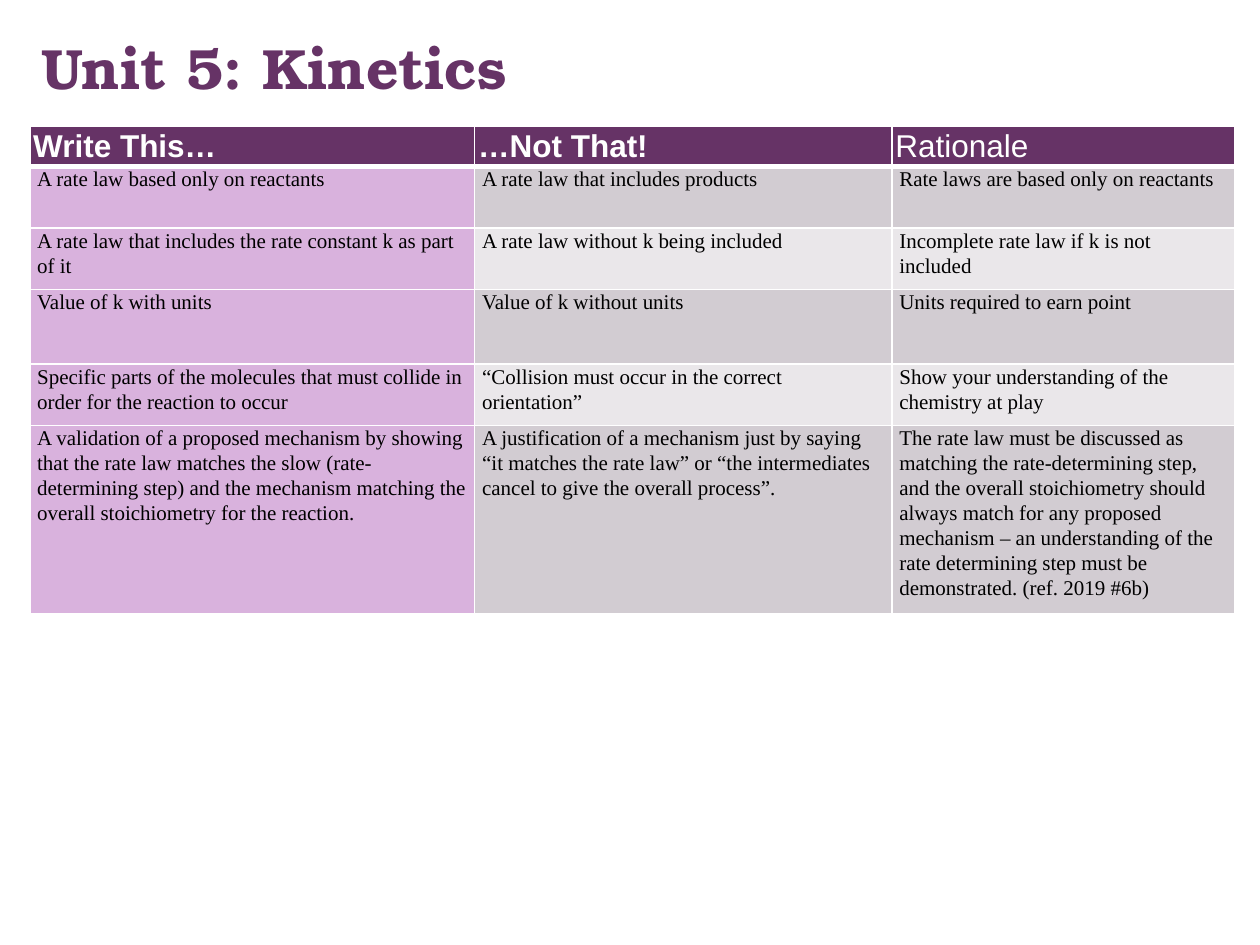
from pptx import Presentation
from pptx.dml.color import RGBColor
from pptx.enum.text import MSO_ANCHOR as Anchor
from pptx.oxml import parse_xml
from pptx.oxml.ns import nsdecls
from pptx.util import Cm, Pt

PURPLE, LILAC, WHITE, BLACK = "663366", "D9B2DD", "FFFFFF", "000000"
BANDS = ["D2CCD2", "EAE7EA"]
COLUMN_WIDTHS = [8.97, 8.41, 6.91]
ROW_HEIGHTS = [0.81, 1.24, 1.24, 1.5, 1.24, 3.5]
ROWS = [
    ["Write This…", "…Not That!", "Rationale"],
    ["A rate law based only on reactants",
     "A rate law that includes products",
     "Rate laws are based only on reactants"],
    ["A rate law that includes the rate constant k as part of it",
     "A rate law without k being included",
     "Incomplete rate law if k is not included"],
    ["Value of k with units",
     "Value of k without units",
     "Units required to earn point"],
    ["Specific parts of the molecules that must collide in order for the reaction to occur",
     "“Collision must occur in the correct orientation”",
     "Show your understanding of the chemistry at play"],
    ["A validation of a proposed mechanism by showing that the rate law matches the slow "
     "(rate-determining step) and the mechanism matching the overall stoichiometry for the reaction.",
     "A justification of a mechanism just by saying “it matches the rate law” or "
     "“the intermediates cancel to give the overall process”.",
     "The rate law must be discussed as matching the rate-determining step, and the overall "
     "stoichiometry should always match for any proposed mechanism – an understanding of the "
     "rate determining step must be demonstrated. (ref. 2019 #6b)"],
]


def style(font, name, size, color, bold):
    font.name, font.size, font.bold = name, Pt(size), bold
    font.color.rgb = RGBColor.from_string(color)


def add_border(cell, side, points):
    cell._tc.get_or_add_tcPr().append(parse_xml(
        f'<a:ln{side} {nsdecls("a")} w="{Pt(points)}"><a:solidFill>'
        f'<a:srgbClr val="{WHITE}"/></a:solidFill></a:ln{side}>'))


deck = Presentation()
deck.slide_width, deck.slide_height = Cm(25.4), Cm(19.05)
page = deck.slides.add_slide(deck.slide_layouts[6])

box = page.shapes.add_textbox(Cm(0.58), Cm(0.5), Cm(23.32), Cm(1.68))
box.text_frame.word_wrap = True
box.text_frame.vertical_anchor = Anchor.MIDDLE
para = box.text_frame.paragraphs[0]
para.text = "Unit 5: Kinetics"
style(para.font, "TeX Gyre Bonum", 32.4, PURPLE, True)

table = page.shapes.add_table(
    len(ROWS), len(COLUMN_WIDTHS), Cm(0.6), Cm(2.54),
    Cm(sum(COLUMN_WIDTHS)), Cm(sum(ROW_HEIGHTS))).table
for column, width in zip(table.columns, COLUMN_WIDTHS):
    column.width = Cm(width)

for r, (texts, height) in enumerate(zip(ROWS, ROW_HEIGHTS)):
    table.rows[r].height = Cm(height)
    header = r == 0
    for c, text in enumerate(texts):
        cell = table.cell(r, c)
        cell.margin_left = cell.margin_right = Cm(0.07 if header else 0.15)
        cell.margin_top = cell.margin_bottom = 0
        for side in "LRTB":
            heavy = (header and side == "B") or (r == 1 and side == "T")
            add_border(cell, side, 3 if heavy else 1)
        fill = PURPLE if header else LILAC if c == 0 else BANDS[(r - 1) % 2]
        cell.fill.solid()
        cell.fill.fore_color.rgb = RGBColor.from_string(fill)
        para = cell.text_frame.paragraphs[0]
        para.text = text
        para.line_spacing = 1.07
        if header:
            style(para.font, "Arial", 18, WHITE, c < 2)
        else:
            style(para.font, "Times New Roman", 12, BLACK, False)

deck.save("out.pptx")
